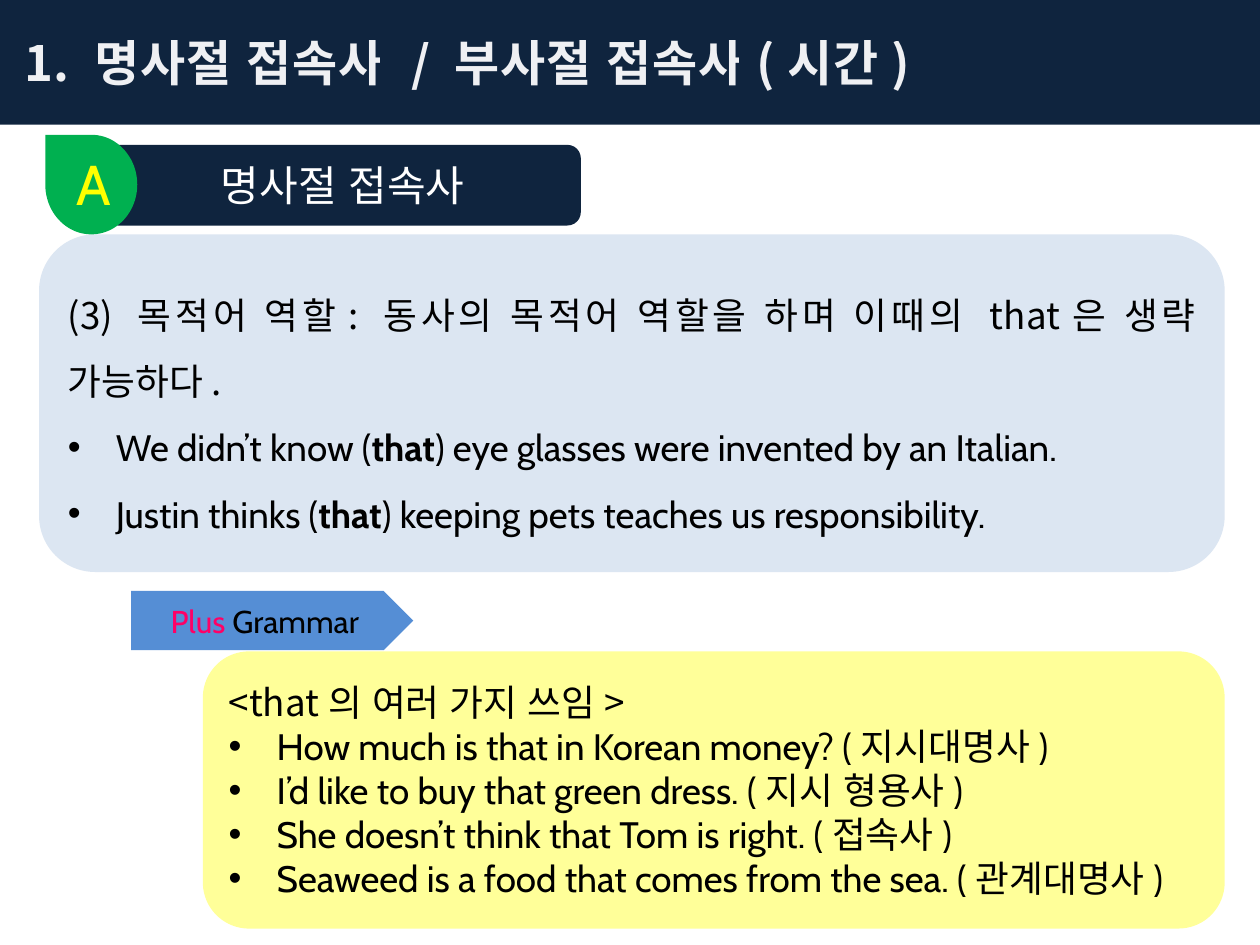
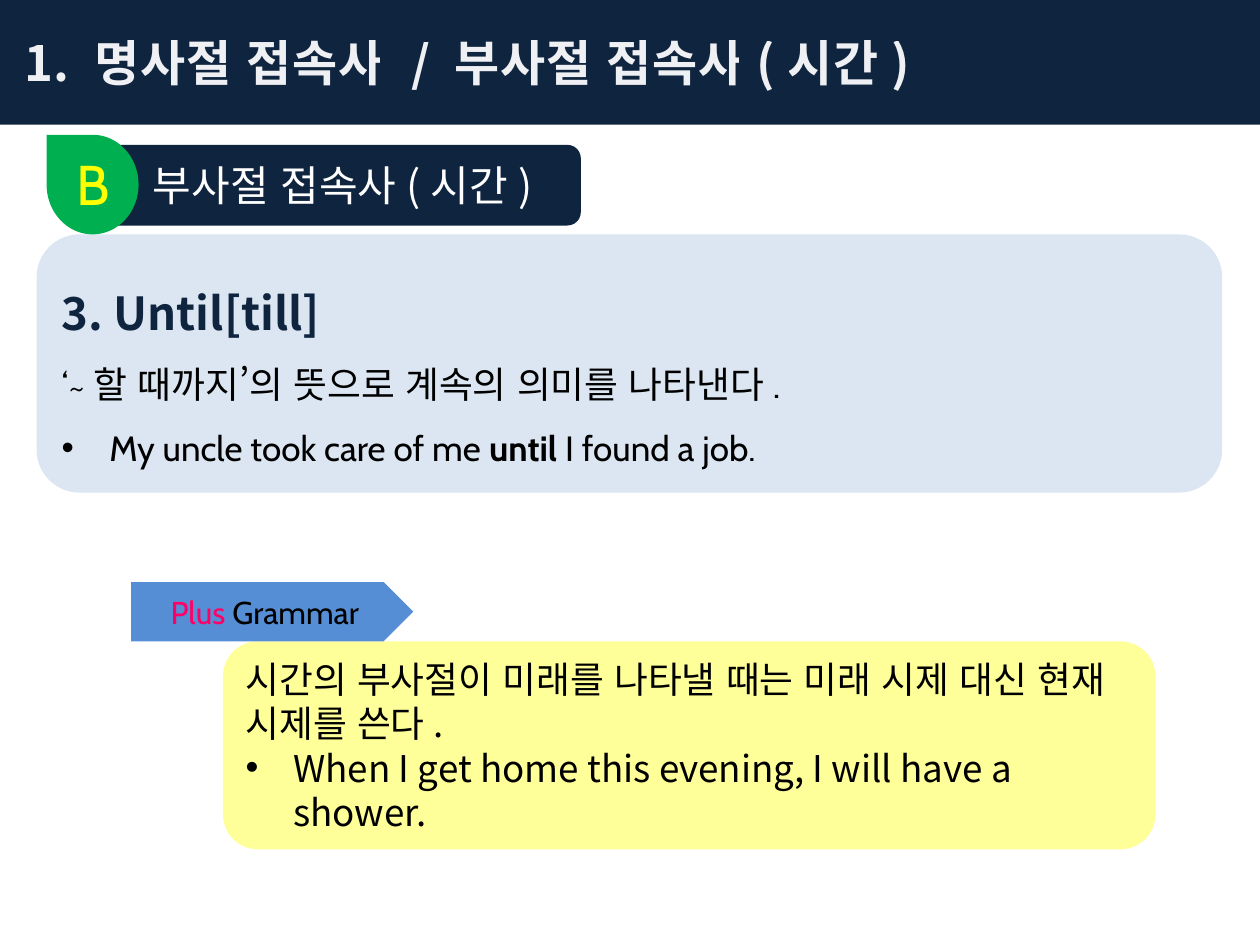
from lxml import etree
from pptx import Presentation
from pptx.dml.color import RGBColor
from pptx.enum import lang, shapes, text
from pptx.oxml import ns
from pptx.util import Inches, Pt

# Colours and fonts
NAVY = RGBColor(0x0F, 0x24, 0x3E)
PALE_BLUE = RGBColor(0xDC, 0xE6, 0xF2)
YELLOW_NOTE = RGBColor(0xFF, 0xFF, 0x99)
TAG_BLUE = RGBColor(0x55, 0x8E, 0xD5)
GREEN = RGBColor(0x00, 0xB0, 0x50)
LETTER_YELLOW = RGBColor(0xFF, 0xFF, 0x00)
PINK = RGBColor(0xFF, 0x00, 0x66)
BLACK = RGBColor(0x00, 0x00, 0x00)
WHITE = RGBColor(0xFF, 0xFF, 0xFF)
TITLE_WHITE = RGBColor(0xFC, 0xFC, 0xFD)
TITLE_EDGE = RGBColor(0x10, 0x1A, 0x26)
LATIN, KOREAN = "Cabin", "Noto Sans CJK KR"

# Slide grid: 100 columns by 75 rows
deck = Presentation()
deck.slide_width, deck.slide_height = Inches(10), Inches(7.5)
COL, ROW = deck.slide_width / 100, deck.slide_height / 75
HANGING = Inches(0.38)

ROUNDED = shapes.MSO_SHAPE.FLOWCHART_ALTERNATE_PROCESS
LEFT, CENTER, JUSTIFY = (text.PP_ALIGN.LEFT, text.PP_ALIGN.CENTER,
                         text.PP_ALIGN.JUSTIFY)


def add_block(slide, preset, cells, fill):
    """Place a plain shape by column, row, columns wide and rows high."""
    left, top, wide, high = cells
    block = slide.shapes.add_shape(preset, int(left * COL), int(top * ROW),
                                   int(wide * COL), int(high * ROW))
    block.shadow.inherit = False
    block.fill.solid()
    block.fill.fore_color.rgb = fill
    block.line.fill.background()
    return block


def write(frame, lines, size=21, face=KOREAN, color=BLACK, align=LEFT,
          spacing=None, bold=False, bullet=False, accent=None):
    """Write (words, changes) lines; the parts between bars take the accent."""
    shared = dict(size=size, face=face, color=color, bold=bold, bullet=bullet)
    for number, (words, changes) in enumerate(lines):
        look = {**shared, **changes}
        line = frame.add_paragraph() if number else frame.paragraphs[0]
        line.alignment, line.line_spacing = align, spacing
        if look["bullet"]:
            props = line._p.get_or_add_pPr()
            props.set("marL", str(HANGING))
            props.set("indent", str(-HANGING))
            etree.SubElement(props, ns.qn("a:buFont"), typeface="Arial")
            etree.SubElement(props, ns.qn("a:buChar"), char="•")
        for part, piece in enumerate(words.split("|")):
            run = line.add_run()
            run.text = piece
            accented = part % 2 == 1
            values = {"size": Pt(look["size"]), "name": look["face"],
                      "bold": look["bold"] or (accented and accent is None),
                      "language_id": lang.MSO_LANGUAGE_ID.KOREAN}
            for key, value in values.items():
                setattr(run.font, key, value)
            run.font.color.rgb = accent if accented and accent else look["color"]
            etree.SubElement(run.font._element, ns.qn("a:ea"), typeface=KOREAN)


EXAMPLE = dict(face=LATIN, bullet=True)

# What each slide says, and where its panels stand
lessons = [
    dict(
        letter="A", drop_left=3.3, heading="명사절 접속사",
        panel=(3.1, 18.6, 94.1, 26.8),
        rule=[
            ("(3) 목적어 역할: 동사의 목적어 역할을 하며 이때의 that은 생략 가능하다.", {}),
            ("We didn’t know (|that|) eye glasses were invented by an Italian.", EXAMPLE),
            ("Justin thinks (|that|) keeping pets teaches us responsibility.", EXAMPLE),
        ],
        tag_top=46.9, note_cells=(16.1, 51.7, 81.1, 22),
        note=[
            ("<that의 여러 가지 쓰임>", {}),
            ("How much is that in Korean money? (지시대명사)", EXAMPLE),
            ("I’d like to buy that green dress. (지시 형용사)", EXAMPLE),
            ("She doesn’t think that Tom is right. (접속사)", EXAMPLE),
            ("Seaweed is a food that comes from the sea. (관계대명사)", EXAMPLE),
        ],
    ),
    dict(
        letter="B", drop_left=3.4, heading="부사절 접속사(시간)",
        panel=(2.9, 18.6, 94.1, 20.5),
        rule=[
            ("3. Until[till]", dict(size=26, color=NAVY, bold=True)),
            ("‘~할 때까지’의 뜻으로 계속의 의미를 나타낸다.", dict(face=LATIN)),
            ("My uncle took care of me |until| I found a job.", {**EXAMPLE, "size": 20}),
        ],
        tag_top=46.2, note_cells=(17.7, 50.9, 74, 16.5),
        note=[
            ("시간의 부사절이 미래를 나타낼 때는 미래 시제 대신 현재 시제를 쓴다.", {}),
            ("When I get home this evening, I will have a shower.", dict(bullet=True)),
        ],
    ),
]

for lesson in lessons:
    slide = deck.slides.add_slide(deck.slide_layouts[6])

    # Title band, with spaced, slightly see-through and faintly edged letters
    band = add_block(slide, shapes.MSO_SHAPE.RECTANGLE, (0, 0, 100, 9.9), NAVY)
    write(band.text_frame, [(" 1. 명사절 접속사 / 부사절 접속사(시간)", {})],
          size=28, color=TITLE_WHITE, bold=True)
    title_props = band.text_frame.paragraphs[0].runs[0].font._element
    title_props.set("spc", "50")
    etree.SubElement(title_props.find(".//" + ns.qn("a:srgbClr")),
                     ns.qn("a:alpha"), val="95000")
    edge = etree.Element(ns.qn("a:ln"), w=str(Pt(1.06)))
    edge_fill = etree.SubElement(edge, ns.qn("a:solidFill"))
    edge_color = etree.SubElement(edge_fill, ns.qn("a:srgbClr"), val=str(TITLE_EDGE))
    etree.SubElement(edge_color, ns.qn("a:alpha"), val="6000")
    title_props.insert(0, edge)

    # Rule panel
    panel = add_block(slide, ROUNDED, lesson["panel"], PALE_BLUE)
    write(panel.text_frame, lesson["rule"], align=JUSTIFY, spacing=1.5)

    # Section heading with its lettered drop
    heading = add_block(slide, ROUNDED, (8.3, 11.5, 37.8, 6.4), NAVY)
    write(heading.text_frame, [(lesson["heading"], {})],
          size=24, color=WHITE, align=CENTER)
    drop = add_block(slide, shapes.MSO_SHAPE.TEAR,
                     (lesson["drop_left"], 11, 7.9, 7.3), GREEN)
    drop.rotation = 270
    letter = slide.shapes.add_textbox(int(5.1 * COL), int(11.4 * ROW),
                                      int(4.7 * COL), int(6.4 * ROW)).text_frame
    letter.word_wrap = True
    letter.auto_size = text.MSO_AUTO_SIZE.SHAPE_TO_FIT_TEXT
    write(letter, [(lesson["letter"], {})], size=32, face=LATIN, color=LETTER_YELLOW)

    # Extra grammar note under its tag
    note = add_block(slide, ROUNDED, lesson["note_cells"], YELLOW_NOTE)
    write(note.text_frame, lesson["note"])
    tag = add_block(slide, shapes.MSO_SHAPE.PENTAGON,
                    (10.4, lesson["tag_top"], 22.4, 4.7), TAG_BLUE)
    write(tag.text_frame, [("|Plus |Grammar", {})], size=18, face=LATIN,
          align=CENTER, accent=PINK)

deck.save("out.pptx")
